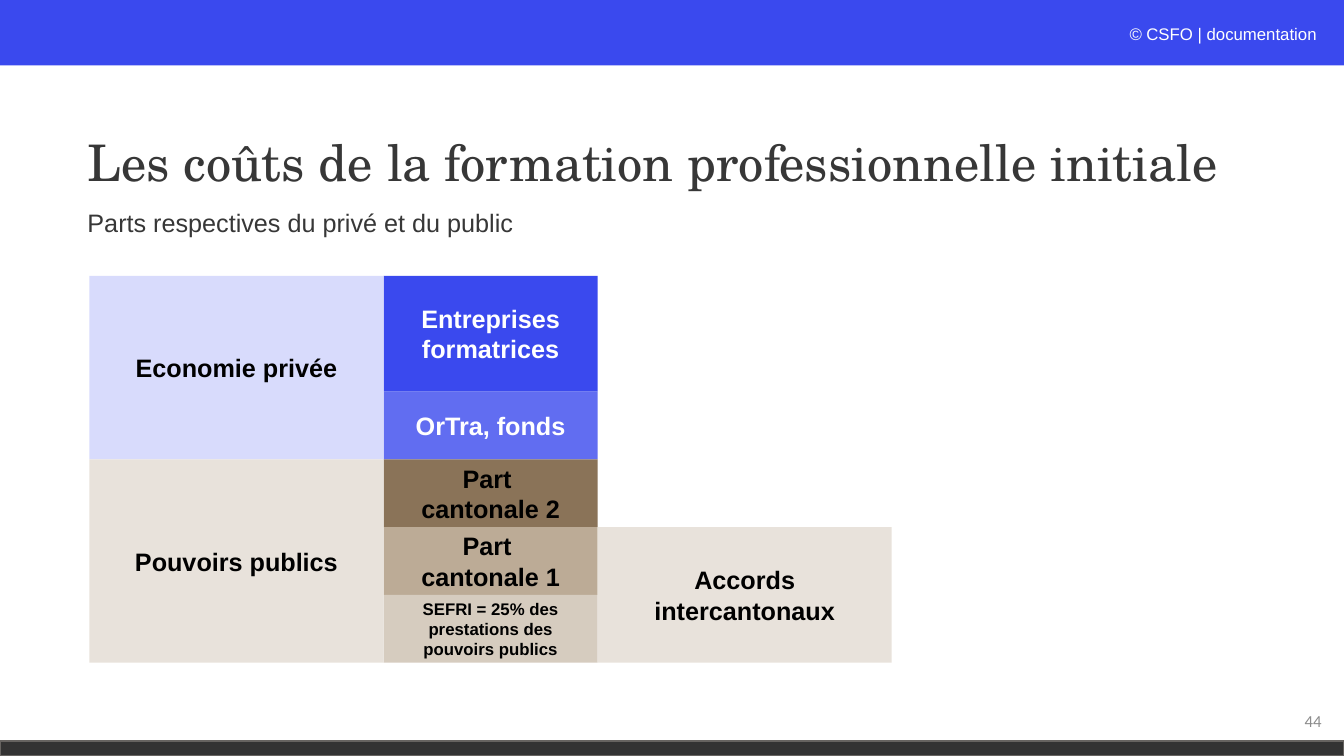
"""Build the slide on the costs of initial vocational training."""
from dataclasses import dataclass
from itertools import accumulate

from pptx import Presentation
from pptx.dml.color import RGBColor
from pptx.enum.shapes import MSO_SHAPE
from pptx.enum.text import MSO_ANCHOR, PP_ALIGN
from pptx.util import Pt


@dataclass(frozen=True)
class Theme:
    """Colours, fonts and type sizes of the slide."""
    blue: str = "3A49EE"
    mid_blue: str = "616DF1"
    pale_blue: str = "D8DBFC"
    brown: str = "8A7358"
    tan: str = "BCAB96"
    sand: str = "D6CCBF"
    cream: str = "E8E2DB"
    charcoal: str = "333333"
    edge: str = "666360"
    ink: str = "373737"
    grey: str = "8C8C8C"
    copyright: str = "FCFDFE"
    white: str = "FFFFFF"
    black: str = "000000"
    serif: str = "TeX Gyre Schola"
    sans: str = "Arial"
    number_font: str = "Calibri"
    title: int = 36
    body: int = 18
    small: int = 12


def write_text(shape, lines, *, font, size, color, bold=False,
               align=PP_ALIGN.LEFT, anchor=MSO_ANCHOR.TOP, spacing=None):
    """Write lines as paragraphs; each line is a list of (text, overrides)."""
    frame = shape.text_frame
    frame.word_wrap = True
    frame.vertical_anchor = anchor
    for index, line in enumerate(lines):
        paragraph = frame.add_paragraph() if index else frame.paragraphs[0]
        paragraph.alignment = align
        if spacing:
            paragraph.line_spacing = spacing
        runs = [(line, {})] if isinstance(line, str) else line
        for text, overrides in runs:
            run = paragraph.add_run()
            run.text = text
            run.font.name = font
            run.font.size = Pt(size)
            run.font.bold = bold
            run.font.italic = overrides.get("italic", False)
            run.font.color.rgb = RGBColor.from_string(overrides.get("color", color))


class SlideBuilder:
    """Draw styled elements on one slide."""

    def __init__(self, slide, theme):
        self.slide = slide
        self.theme = theme

    def block(self, left, top, width, height, fill, line=None):
        """Add a flat rectangle."""
        shape = self.slide.shapes.add_shape(
            MSO_SHAPE.RECTANGLE, Pt(left), Pt(top), Pt(width), Pt(height))
        shape.shadow.inherit = False
        shape.fill.solid()
        shape.fill.fore_color.rgb = RGBColor.from_string(fill)
        if line:
            shape.line.color.rgb = RGBColor.from_string(line)
            shape.line.width = Pt(1)
        else:
            shape.line.fill.background()
        return shape

    def cost_block(self, left, top, width, height, fill, lines, color, size):
        """Add a rectangle with a bold centred label."""
        shape = self.block(left, top, width, height, fill)
        write_text(shape, lines, font=self.theme.sans, size=size, color=color,
                   bold=True, align=PP_ALIGN.CENTER, anchor=MSO_ANCHOR.MIDDLE)

    def text(self, left, top, width, height, lines, **text_format):
        """Add a text box."""
        shape = self.slide.shapes.add_textbox(
            Pt(left), Pt(top), Pt(width), Pt(height))
        write_text(shape, lines, **text_format)


def add_frame(builder):
    """Add the bands, headings and slide number."""
    theme = builder.theme
    builder.block(0, 0, 960, 46.8, theme.blue)
    builder.block(0, 529.2, 960, 10.8, theme.charcoal, theme.edge)
    credit = [("© ", {"italic": True, "color": theme.copyright}),
              ("CSFO | documentation ", {})]
    builder.text(620.6, 13.7, 330.5, 21.6, [credit], font=theme.sans,
                 size=theme.small, color=theme.white, align=PP_ALIGN.RIGHT)
    builder.text(55.4, 65.5, 848.9, 104.4,
                 ["Les coûts de la formation professionnelle initiale"],
                 font=theme.serif, size=theme.title, color=theme.ink,
                 anchor=MSO_ANCHOR.MIDDLE, spacing=0.9)
    builder.text(55.4, 146.9, 634.3, 38.9,
                 ["Parts respectives du privé et du public"],
                 font=theme.sans, size=theme.body, color=theme.ink, spacing=0.9)
    builder.text(735.1, 500.4, 216, 28.8, ["44"], font=theme.number_font,
                 size=theme.small, color=theme.grey, align=PP_ALIGN.RIGHT,
                 anchor=MSO_ANCHOR.MIDDLE)


def add_costs(builder):
    """Add the stacked cost shares and the groups beside them."""
    theme = builder.theme
    side_width, stack_width = 210.1, 152.9
    sources_left, stack_left, accords_left = accumulate(
        [63.9, side_width, stack_width])
    row = 48.4
    heights = [82.7, row, row, row, row]
    tops = list(accumulate(heights, initial=197))
    shares = [
        (theme.blue, ["Entreprises", "formatrices"], theme.white, theme.body),
        (theme.mid_blue, ["OrTra, fonds"], theme.white, theme.body),
        (theme.brown, ["Part ", "cantonale 2"], theme.black, theme.body),
        (theme.tan, ["Part ", "cantonale 1"], theme.black, theme.body),
        (theme.sand, ["SEFRI = 25% des", "prestations des", "pouvoirs publics"],
         theme.black, theme.small),
    ]
    for top, height, share in zip(tops, heights, shares):
        builder.cost_block(stack_left, top, stack_width, height, *share)
    groups = [
        (sources_left, 0, 2, theme.pale_blue, ["Economie privée"]),
        (sources_left, 2, 5, theme.cream, ["Pouvoirs publics"]),
        (accords_left, 3, 5, theme.cream, ["Accords", "intercantonaux"]),
    ]
    for left, first, end, fill, lines in groups:
        builder.cost_block(left, tops[first], side_width, tops[end] - tops[first],
                           fill, lines, theme.black, theme.body)


def main():
    """Create and save the presentation."""
    presentation = Presentation()
    presentation.slide_width = Pt(960)
    presentation.slide_height = Pt(540)
    slide = presentation.slides.add_slide(presentation.slide_layouts[6])
    builder = SlideBuilder(slide, Theme())
    add_frame(builder)
    add_costs(builder)
    presentation.save("out.pptx")


if __name__ == "__main__":
    main()
